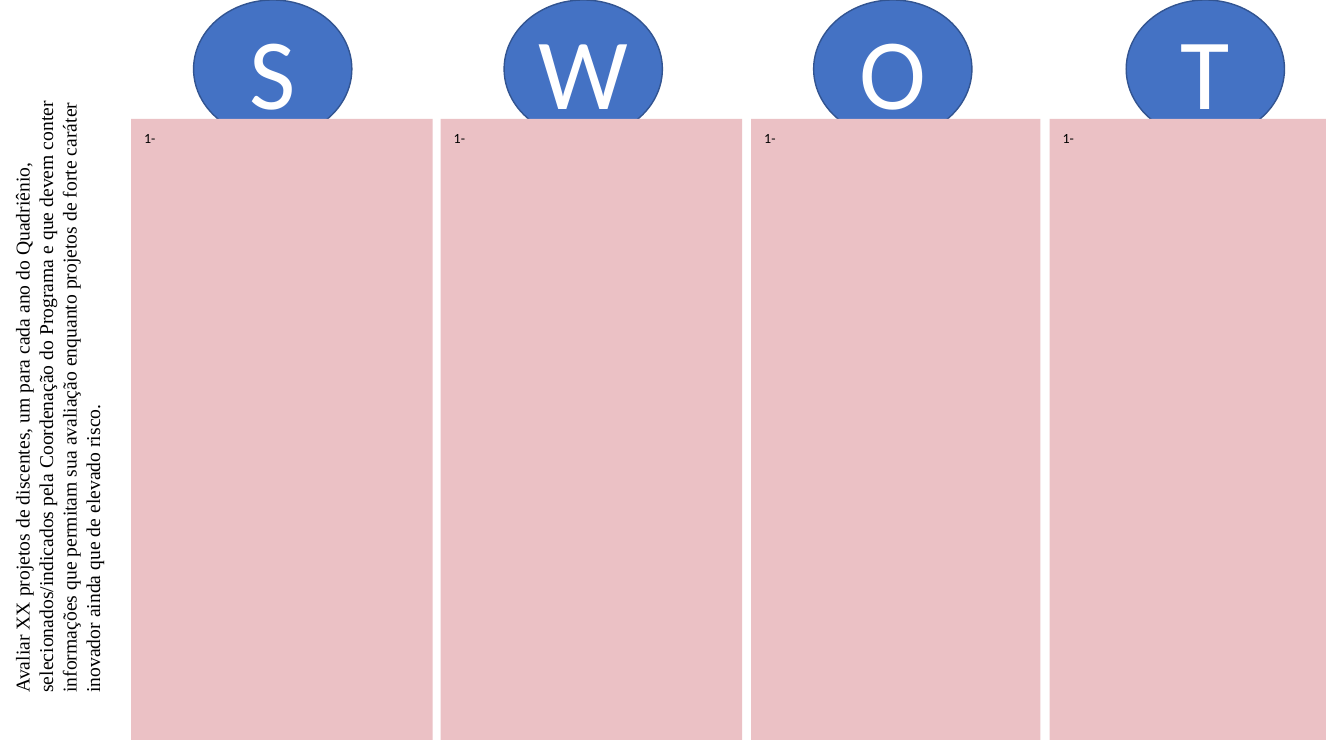
from pptx import Presentation
from pptx import util as u
from pptx.dml.color import RGBColor
from pptx.enum import shapes, text

BRIEF = ("Avaliar XX projetos de discentes, um para cada ano do Quadriênio, "
         "selecionados/indicados pela Coordenação do Programa e que devem conter "
         "informações que permitam sua avaliação enquanto projetos de forte caráter "
         "inovador ainda que de elevado risco.")
PANEL_TOP, PANEL_HEIGHT = 1.18, 6.16
BADGE_WIDTH, BADGE_HEIGHT = 1.57, 1.37
COLUMNS = [("S", 1.3, 2.99, 0.62), ("W", 4.37, 2.99, 0.63),
           ("O", 7.45, 2.87, 0.62), ("T", 10.41, 2.74, 0.76)]


def rgb(value):
    """Turn a hex string into a colour."""
    return RGBColor.from_string(value)


def write(sp, words, size, font, color):
    """Put one styled paragraph into a shape and return its text frame."""
    tf = sp.text_frame
    tf.word_wrap = True
    p = tf.paragraphs[0]
    p.text = words
    p.alignment = text.PP_ALIGN.LEFT
    p.font.size, p.font.name = u.Pt(size), font
    p.font.color.rgb = rgb(color)
    return tf


def add_block(s, kind, box, fill, line=None):
    """Add a flat filled shape with an optional outline."""
    sp = s.shapes.add_shape(kind, *map(u.Inches, box))
    sp.shadow.inherit = False
    sp.fill.solid()
    sp.fill.fore_color.rgb = rgb(fill)
    if line:
        sp.line.color.rgb = rgb(line)
        sp.line.width = u.Pt(1)
    else:
        sp.line.fill.background()
    return sp


def add_brief(s, box):
    """Add the sideways task description."""
    sp = s.shapes.add_textbox(*map(u.Inches, box))
    tf = write(sp, BRIEF, 14, "Times New Roman", "000000")
    tf._txBody.bodyPr.set("vert", "vert270")


def add_column(s, letter, left, width, badge_offset):
    """Add a letter badge tucked behind its list panel."""
    badge_box = (left + badge_offset, 0, BADGE_WIDTH, BADGE_HEIGHT)
    badge = add_block(s, shapes.MSO_SHAPE.OVAL, badge_box, "4472C4", "325491")
    tf = write(badge, letter, 72, "Calibri", "FFFFFF")
    tf.vertical_anchor = text.MSO_ANCHOR.MIDDLE
    tf.paragraphs[0].alignment = text.PP_ALIGN.CENTER
    panel_box = (left, PANEL_TOP, width, PANEL_HEIGHT)
    panel = add_block(s, shapes.MSO_SHAPE.RECTANGLE, panel_box, "EBC1C5")
    tf = write(panel, "1-", 10, "Calibri", "000000")
    tf.vertical_anchor = text.MSO_ANCHOR.TOP
    tf.margin_left, tf.margin_top = u.Inches(0.13), u.Inches(0.11)


def main():
    """Build the SWOT slide."""
    prs = Presentation()
    prs.slide_width, prs.slide_height = u.Inches(13.33), u.Inches(7.5)
    s = prs.slides.add_slide(prs.slide_layouts[6])
    add_brief(s, (0.05, 0.52, 1.14, 6.45))
    for column in COLUMNS:
        add_column(s, *column)
    prs.save("out.pptx")


if __name__ == "__main__":
    main()
